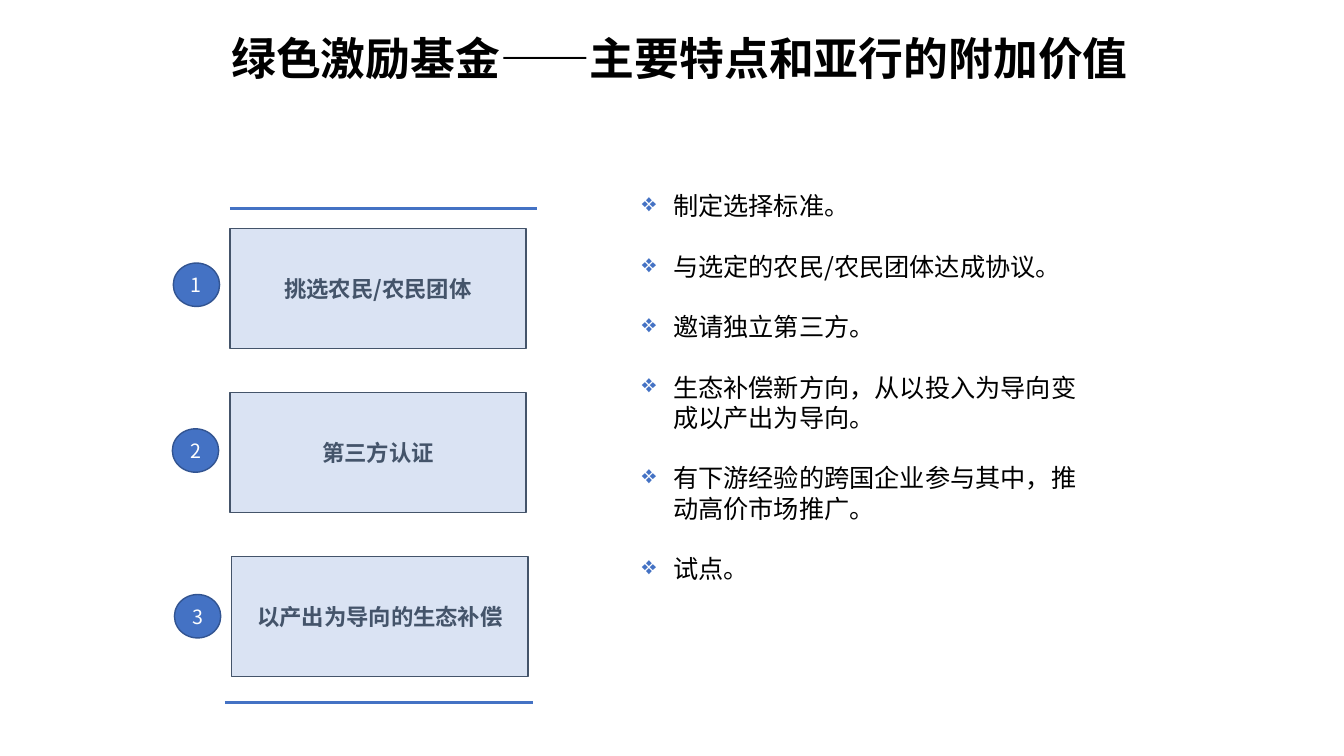
from lxml import etree
from pptx import Presentation
from pptx.dml.color import RGBColor
from pptx.enum.shapes import MSO_CONNECTOR, MSO_SHAPE
from pptx.enum.text import MSO_ANCHOR, MSO_AUTO_SIZE, PP_ALIGN
from pptx.oxml.ns import qn
from pptx.util import Pt

TITLE = "绿色激励基金——主要特点和亚行的附加价值"
STEPS = [
    ("挑选农民/农民团体", 164.2, 123.8),
    ("第三方认证", 164.2, 123.1),
    ("以产出为导向的生态补偿", 165.6, 124.6),
]
FEATURES = [
    "制定选择标准。",
    "与选定的农民/农民团体达成协议。",
    "邀请独立第三方。",
    "生态补偿新方向，从以投入为导向变成以产出为导向。",
    "有下游经验的跨国企业参与其中，推动高价市场推广。",
    "试点。",
]
RULES = [(164.2, 383.8, 149), (160.6, 380.9, 501.8)]

FONT = "Noto Sans CJK SC"
BLACK = RGBColor(0x00, 0x00, 0x00)
WHITE = RGBColor(0xFF, 0xFF, 0xFF)
BLUE = RGBColor(0x44, 0x72, 0xC4)
DARK_BLUE = RGBColor(0x32, 0x54, 0x91)
PALE_BLUE = RGBColor(0xDA, 0xE3, 0xF3)
SLATE = RGBColor(0x44, 0x54, 0x6A)
CENTER = PP_ALIGN.CENTER
LEFT = PP_ALIGN.LEFT
TOP, MIDDLE = MSO_ANCHOR.TOP, MSO_ANCHOR.MIDDLE
RECT, OVAL = MSO_SHAPE.RECTANGLE, MSO_SHAPE.OVAL

STEP_TOP, STEP_PITCH, STEP_W, STEP_H = 163.4, 117, 211.7, 85.7
BADGE_TOP, BADGE_PITCH, BADGE_W, BADGE_H = 187.9, 118.4, 33.1, 31
LINE_HEIGHT = 21.6
INDENT = 22.3


def format_paragraph(paragraph, size, color, bold=False, align=CENTER):
    paragraph.alignment = align
    font = paragraph.font
    font.name, font.size, font.bold = FONT, Pt(size), bold
    font.color.rgb = color
    defaults = paragraph._p.pPr.find(qn("a:defRPr"))
    etree.SubElement(defaults, qn("a:ea"), typeface=FONT)


def add_bullet(paragraph):
    props = paragraph._p.get_or_add_pPr()
    props.set("marL", str(Pt(INDENT)))
    props.set("indent", str(-Pt(INDENT)))
    bullet_color = etree.SubElement(props, qn("a:buClr"))
    etree.SubElement(bullet_color, qn("a:srgbClr"), val=str(BLUE))
    etree.SubElement(props, qn("a:buChar"), char="❖")


def add_label(slide, kind, box, text, fill, outline, size, color, bold=False):
    shape = slide.shapes.add_shape(kind, *map(Pt, box))
    shape.shadow.inherit = False
    shape.fill.solid()
    shape.fill.fore_color.rgb = fill
    shape.line.color.rgb = outline
    shape.line.width = Pt(1)
    frame = shape.text_frame
    frame.margin_left = frame.margin_right = 0
    frame.margin_top = frame.margin_bottom = 0
    frame.vertical_anchor = MIDDLE
    frame.text = text
    format_paragraph(frame.paragraphs[0], size, color, bold)


def add_title(slide):
    title = slide.shapes.title
    title.left, title.top, title.width, title.height = map(Pt, (43.9, 15.8, 883.4, 85))
    frame = title.text_frame
    frame.text = TITLE
    frame.vertical_anchor = TOP
    frame.auto_size = MSO_AUTO_SIZE.NONE
    paragraph = frame.paragraphs[0]
    paragraph.line_spacing = Pt(41)
    format_paragraph(paragraph, 32, BLACK, True)


def add_steps(slide):
    for i, (text, left, badge_left) in enumerate(STEPS):
        add_label(slide, RECT, (left, STEP_TOP + i * STEP_PITCH, STEP_W, STEP_H),
                  text, PALE_BLUE, SLATE, 16, SLATE, True)
        add_label(slide, OVAL, (badge_left, BADGE_TOP + i * BADGE_PITCH, BADGE_W, BADGE_H),
                  str(i + 1), BLUE, DARK_BLUE, 14, WHITE)


def add_rules(slide):
    for start, end, y in RULES:
        rule = slide.shapes.add_connector(MSO_CONNECTOR.STRAIGHT, Pt(start), Pt(y), Pt(end), Pt(y))
        rule.line.color.rgb = BLUE
        rule.line.width = Pt(2)
        etree.SubElement(rule._element.spPr, qn("a:effectLst"))


def add_features(slide):
    frame = slide.shapes.add_textbox(Pt(451.4), Pt(132.5), Pt(331.9), Pt(378)).text_frame
    frame.word_wrap = True
    for i, text in enumerate(FEATURES):
        paragraph = frame.add_paragraph() if i else frame.paragraphs[0]
        paragraph.text = text
        paragraph.line_spacing = Pt(LINE_HEIGHT)
        if i:
            paragraph.space_before = Pt(LINE_HEIGHT)
        add_bullet(paragraph)
        format_paragraph(paragraph, 18, BLACK, align=LEFT)


def main():
    deck = Presentation()
    deck.slide_width, deck.slide_height = Pt(960), Pt(540)
    slide = deck.slides.add_slide(deck.slide_layouts[5])
    add_title(slide)
    add_features(slide)
    add_steps(slide)
    add_rules(slide)
    deck.save("out.pptx")


if __name__ == "__main__":
    main()
